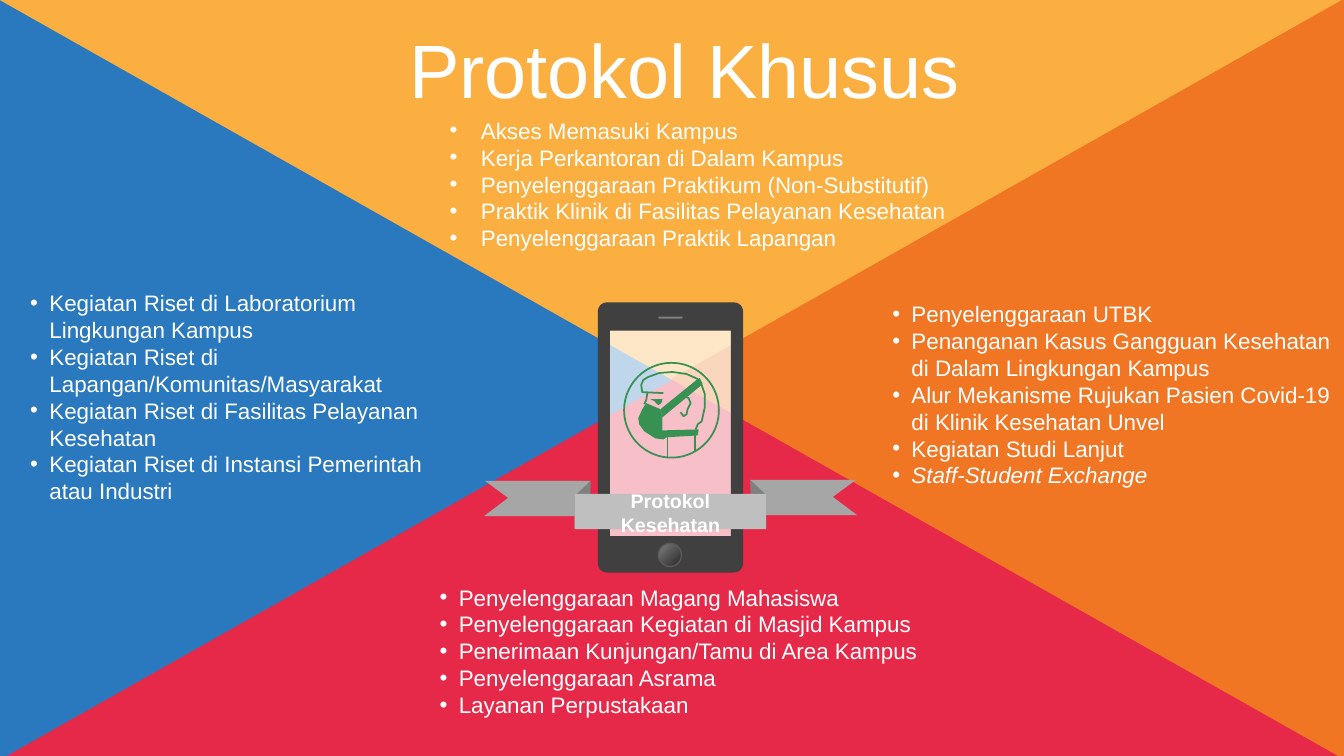
import math
from lxml import etree
from pptx import Presentation, util as u
from pptx.dml.color import RGBColor
from pptx.enum import shapes as kinds, text as txt
from pptx.oxml.ns import qn

# Content
HEADING = "Protokol Khusus"
BADGE = "Protokol Kesehatan"
ITALIC_ITEMS = {"Staff-Student Exchange"}
LISTS = [  # placeholder idx, (left, top, width, height), hanging indent, items
    (1, (8.75, 2.93, 4.62, 2.52), 0.19, [
        "Penyelenggaraan UTBK",
        "Penanganan Kasus Gangguan Kesehatan di Dalam Lingkungan Kampus",
        "Alur Mekanisme Rujukan Pasien Covid-19 di Klinik Kesehatan Unvel",
        "Kegiatan Studi Lanjut",
        "Staff-Student Exchange"]),
    (2, (0.2, 2.82, 4.6, 2.26), 0.19, [
        "Kegiatan Riset di Laboratorium Lingkungan Kampus",
        "Kegiatan Riset di Lapangan/Komunitas/Masyarakat",
        "Kegiatan Riset di Fasilitas Pelayanan Kesehatan",
        "Kegiatan Riset di Instansi Pemerintah\vatau Industri"]),
    (3, (4.26, 5.74, 5.39, 1.7), 0.19, [
        "Penyelenggaraan Magang Mahasiswa",
        "Penyelenggaraan Kegiatan di Masjid Kampus",
        "Penerimaan Kunjungan/Tamu di Area Kampus",
        "Penyelenggaraan Asrama",
        "Layanan Perpustakaan"]),
    (4, (4.36, 1.11, 7.01, 1.99), 0.31, [
        "Akses Memasuki Kampus",
        "Kerja Perkantoran di Dalam Kampus",
        "Penyelenggaraan Praktikum (Non-Substitutif)",
        "Praktik Klinik di Fasilitas Pelayanan Kesehatan",
        "Penyelenggaraan Praktik Lapangan"]),
]

# Colours
WHITE = RGBColor(0xFF, 0xFF, 0xFF)
RED = RGBColor(0xE6, 0x29, 0x49)
YELLOW = RGBColor(0xFA, 0xAF, 0x40)
BLUE = RGBColor(0x2A, 0x78, 0xBD)
ORANGE = RGBColor(0xF0, 0x76, 0x24)
GREEN = RGBColor(0x37, 0x91, 0x53)
CASE = RGBColor(0x40, 0x40, 0x40)
BUTTON_DARK = RGBColor(0x26, 0x26, 0x26)
BUTTON_EDGE = RGBColor(0x59, 0x59, 0x59)
FOLD = RGBColor(0x80, 0x80, 0x80)
TAIL = RGBColor(0xA6, 0xA6, 0xA6)
BAND = RGBColor(0xBF, 0xBF, 0xBF)

# Drawn parts
TRIANGLES = [  # box before turning, rotation, colour
    ((-0.03, 3.76, 13.38, 3.77), 0, RED),
    ((-0.03, 0, 13.38, 3.77), 180, YELLOW),
    ((-0.45, 0.43, 7.55, 6.68), 90, BLUE),
    ((6.22, 0.42, 7.55, 6.68), 270, ORANGE),
]
RIBBON_TAIL = [(5.85, 4.77), (4.81, 4.77), (5.04, 4.94), (4.8, 5.12), (5.85, 5.12)]
RIBBON_FOLD = [(5.7, 4.92), (5.86, 4.77), (5.85, 5.07), (5.7, 5.25)]
FIGURE_FILLS = [
    # mask, strap, collar, eye
    [(6.41, 4), (6.55, 4.06), (6.57, 4.14), (6.57, 4.27), (6.61, 4.34), (6.58, 4.36),
     (6.5, 4.35), (6.39, 4.28), (6.34, 4.21), (6.33, 4.15), (6.37, 4.06)],
    [(6.55, 4.06), (6.92, 3.76), (6.94, 3.75), (6.97, 3.81), (6.57, 4.14)],
    [(6.57, 4.27), (6.93, 4.26), (6.92, 4.32), (6.58, 4.34)],
    [(6.45, 3.96), (6.57, 3.96), (6.56, 4), (6.53, 4.02), (6.49, 3.98)],
]
FIGURE_LINES = [
    # cap with brim, brow, nape, ear, two neck lines
    [(6.58, 3.9), (6.37, 3.89), (6.36, 3.82), (6.38, 3.77), (6.43, 3.74), (6.54, 3.7),
     (6.67, 3.69), (6.81, 3.71), (6.92, 3.76)],
    [(6.42, 3.9), (6.41, 3.97), (6.39, 4.01)],
    [(6.96, 3.82), (6.99, 3.91), (6.99, 4.04), (6.96, 4.18), (6.92, 4.21), (6.9, 4.26)],
    [(6.71, 4.01), (6.72, 3.95), (6.78, 3.93), (6.83, 3.95), (6.85, 4), (6.82, 4.06),
     (6.81, 4.11), (6.78, 4.13), (6.75, 4.09)],
    [(6.62, 4.34), (6.62, 4.53)],
    [(6.89, 4.32), (6.89, 4.47)],
]

deck = Presentation()
deck.slide_width, deck.slide_height = u.Inches(13.33), u.Inches(7.5)
slide = deck.slides.add_slide(deck.slide_layouts.get_by_name("Comparison"))


def paint(shape, fill=None, line=None, weight=1):
    shape.shadow.inherit = False
    if fill is None:
        shape.fill.background()
    else:
        shape.fill.solid()
        shape.fill.fore_color.rgb = fill
    if line is None:
        shape.line.fill.background()
    else:
        shape.line.color.rgb = line
        shape.line.width = u.Pt(weight)
    return shape


def preset(kind, box, **look):
    return paint(slide.shapes.add_shape(kind, *map(u.Inches, box)), **look)


def outline(*contours, close=True, **look):
    mils = [[(x * 1000, y * 1000) for x, y in points] for points in contours]
    pen = slide.shapes.build_freeform(*mils[0][0], scale=914.4)
    for n, points in enumerate(mils):
        if n:
            pen.move_to(*points[0])
        pen.add_line_segments(points[1:], close=close)
    return paint(pen.convert_to_shape(), **look)


def rounded(left, top, right, bottom, radius, steps=6):
    corners = [(right - radius, bottom - radius), (left + radius, bottom - radius),
               (left + radius, top + radius), (right - radius, top + radius)]
    return [(x + radius * math.cos(a), y + radius * math.sin(a))
            for quarter, (x, y) in enumerate(corners)
            for a in (math.pi / 2 * (quarter + k / steps) for k in range(steps + 1))]


def write(box, holder, items, size, frame_look, para_look, hang=0, bold=False):
    holder.left, holder.top, holder.width, holder.height = map(u.Inches, box)
    holder.element.getparent().append(holder.element)  # bring to front
    frame = holder.text_frame
    frame.text = "\n".join(items)
    for key, value in dict(word_wrap=True, auto_size=txt.MSO_AUTO_SIZE.NONE, **frame_look).items():
        setattr(frame, key, value)
    for item, para in zip(items, frame.paragraphs):
        for key, value in para_look.items():
            setattr(para, key, value)
        look = dict(name="Arial", size=u.Pt(size), bold=bold, italic=item in ITALIC_ITEMS)
        for run in para.runs:
            for key, value in look.items():
                setattr(run.font, key, value)
            run.font.color.rgb = WHITE
        if hang:
            props = para._p.get_or_add_pPr()
            props.set("marL", str(u.Inches(hang)))
            props.set("indent", str(-u.Inches(hang)))
            etree.SubElement(props, qn("a:buFont")).set("typeface", "Arial")
            etree.SubElement(props, qn("a:buChar")).set("char", "•")


SHAPE = kinds.MSO_SHAPE

# Four background triangles
for box, turn, colour in TRIANGLES:
    preset(SHAPE.ISOSCELES_TRIANGLE, box, fill=colour).rotation = turn

# Phone
screen = preset(SHAPE.RECTANGLE, (6.05, 3.27, 1.21, 2.09), fill=WHITE)
tint = screen.fill._xPr.find(qn("a:solidFill"))[0]
etree.SubElement(tint, qn("a:alpha")).set("val", "70000")
outline(rounded(5.93, 3, 7.37, 5.68, 0.09),
        [(6.05, 3.28), (6.05, 5.32), (7.25, 5.32), (7.25, 3.28)], fill=CASE)
preset(SHAPE.ROUNDED_RECTANGLE, (6.53, 3.14, 0.24, 0.02), fill=FOLD).adjustments[0] = 0.5
button = preset(SHAPE.OVAL, (6.53, 5.39, 0.23, 0.23), line=BUTTON_EDGE)
button.fill.gradient()
button.fill.gradient_angle = 135
for stop, colour in zip(button.fill.gradient_stops, (BUTTON_DARK, FOLD)):
    stop.color.rgb = colour

# Ribbon: right half mirrors the left
for part, colour in ((RIBBON_TAIL, TAIL), (RIBBON_FOLD, FOLD)):
    outline(part, fill=colour)
    outline([(13.3 - x, y - 0.01) for x, y in part], fill=colour)
preset(SHAPE.RECTANGLE, (5.7, 4.9, 1.9, 0.35), fill=BAND)

# Masked figure in a ring
preset(SHAPE.OVAL, (6.19, 3.6, 0.94, 0.94), line=GREEN, weight=1.25)
for part in FIGURE_FILLS:
    outline(part, fill=GREEN)
for part in FIGURE_LINES:
    outline(part, close=False, line=GREEN, weight=1.25)

# Texts
TOP, MIDDLE = txt.MSO_ANCHOR.TOP, txt.MSO_ANCHOR.MIDDLE
LEFT, CENTER = txt.PP_ALIGN.LEFT, txt.PP_ALIGN.CENTER
holders = {holder.placeholder_format.idx: holder for holder in slide.placeholders}
for idx, box, hang, items in LISTS:
    write(box, holders[idx], items, 16, dict(vertical_anchor=TOP),
          dict(alignment=LEFT, line_spacing=1.0, space_before=u.Pt(0)), hang)
badge_box = (5.7, 4.8, 1.9, 0.57)
write(badge_box, slide.shapes.add_textbox(*map(u.Inches, badge_box)), [BADGE], 14,
      dict(vertical_anchor=MIDDLE), dict(alignment=CENTER), bold=True)
write((0.57, 0.34, 12.44, 0.79), slide.shapes.title, [HEADING], 54,
      dict(vertical_anchor=MIDDLE),
      dict(alignment=CENTER, line_spacing=0.9, space_before=u.Pt(10)))

deck.save("out.pptx")
